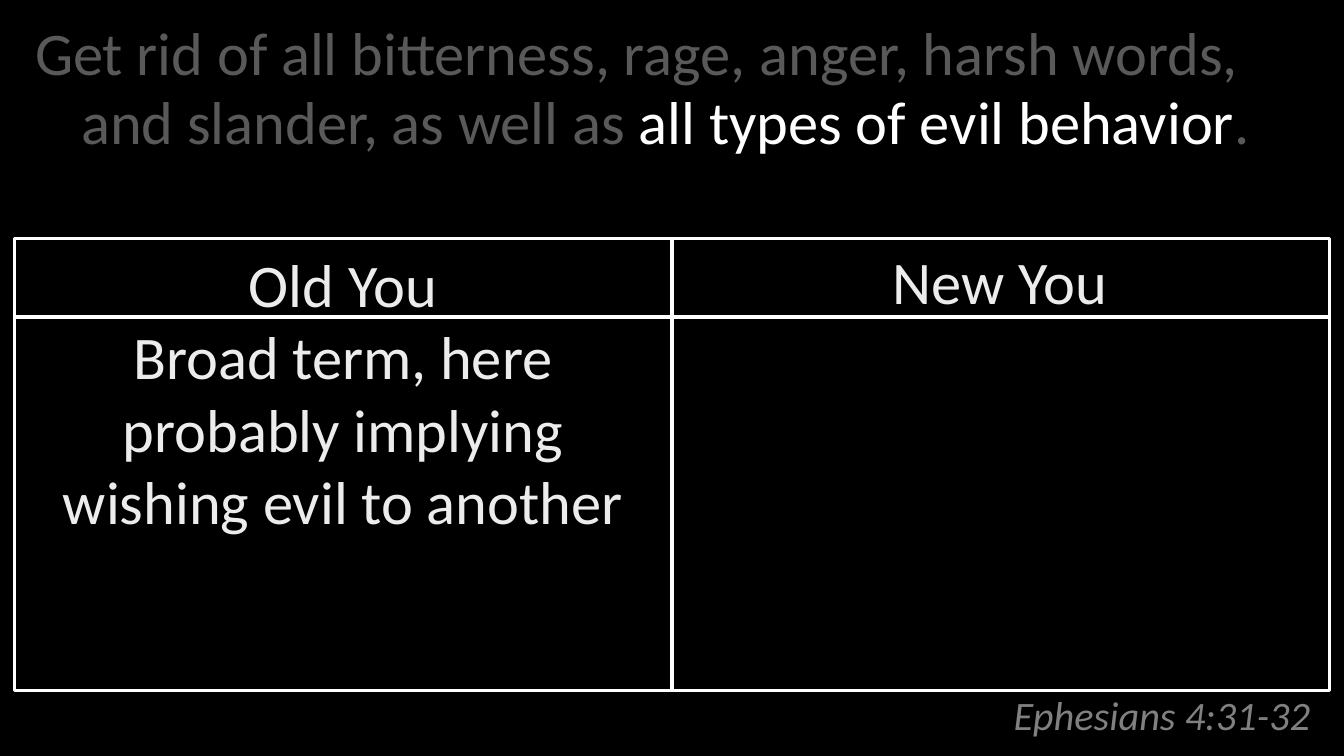
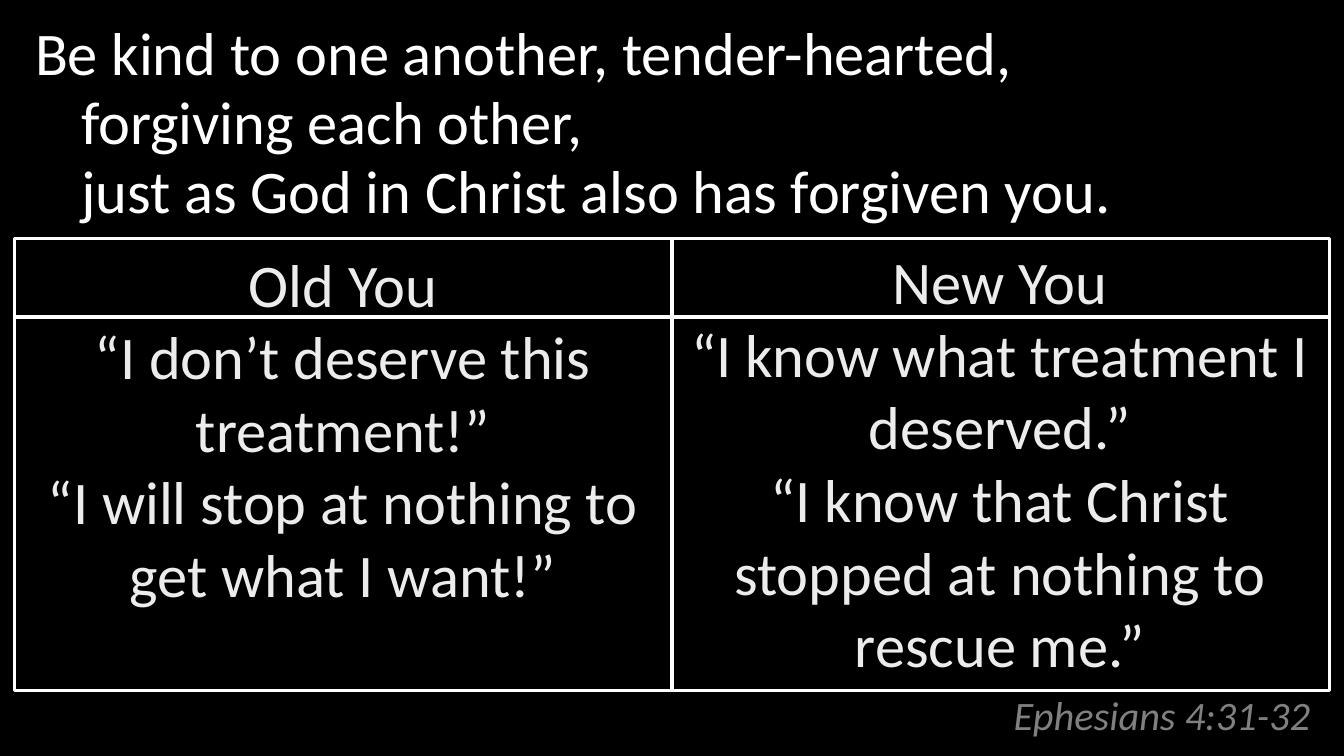
from lxml import etree
from pptx import Presentation
from pptx.dml.color import RGBColor
from pptx.enum import shapes, text
from pptx.oxml import ns
from pptx.util import Inches, Pt

WHITE, PALE, GRAY, DIM = "FFFFFF", "ECECEC", "808080", "595959"
LEFT, TOP, WIDTH, HEIGHT = 0.12, 1.97, 10.87, 3.74
RULE = 2.62

SLIDES = [
    {
        "verse": [
            ("Get rid of all bitterness, rage, anger, harsh words, and slander, as well as ", DIM),
            ("all types of evil behavior", WHITE),
            (".", DIM),
        ],
        "old": ["Broad term, here probably implying wishing evil to another"],
        "new": [],
    },
    {
        "verse": [
            ("Be kind to one another, tender-hearted, \nforgiving each other, \n"
             "just as God in Christ also has forgiven you.", WHITE),
        ],
        "old": ["“I don’t deserve this treatment!”",
                "“I will stop at nothing to get what I want!”"],
        "new": ["“I know what treatment I deserved.”",
                "“I know that Christ stopped at nothing to rescue me.”"],
    },
]


def color(value):
    return RGBColor.from_string(value)


def write(para, words, size=36, ink=PALE, italic=None):
    for index, line in enumerate(words.split("\n")):
        if index:
            para.add_line_break()
        span = para.add_run()
        span.text = line
        span.font.name = "Calibri"
        span.font.size = Pt(size)
        span.font.italic = italic
        span.font.color.rgb = color(ink)


deck = Presentation()
deck.slide_width, deck.slide_height = Inches(11.11), Inches(6.25)
backdrop = deck.slide_master.background.fill
backdrop.solid()
backdrop.fore_color.rgb = color("000000")

for content in SLIDES:
    page = deck.slides.add_slide(deck.slide_layouts[1])

    title, body = page.shapes.title, page.placeholders[1]
    title.left, title.top, title.width, title.height = map(Inches, (7.06, 5.56, 3.87, 0.59))
    body.left, body.top, body.width, body.height = map(Inches, (0.19, 0.12, 10.74, 5.29))
    for holder in (title, body):
        holder.text_frame.auto_size = text.MSO_AUTO_SIZE.NONE

    title.text_frame.vertical_anchor = text.MSO_ANCHOR.BOTTOM
    para = title.text_frame.paragraphs[0]
    para.alignment = text.PP_ALIGN.RIGHT
    para.line_spacing = 0.8
    write(para, "Ephesians 4:31-32", size=24, ink=GRAY, italic=True)

    para = body.text_frame.paragraphs[0]
    para.line_spacing = 0.95
    for words, ink in content["verse"]:
        write(para, words, ink=ink)
    properties = para._p.get_or_add_pPr()
    properties.set("marL", str(Inches(0.38)))
    properties.set("indent", str(Inches(-0.38)))
    etree.SubElement(properties, ns.qn("a:buNone"))

    frame = page.shapes.add_shape(
        shapes.MSO_SHAPE.RECTANGLE, *map(Inches, (LEFT, TOP, WIDTH, HEIGHT)))
    frame.shadow.inherit = False
    frame.fill.background()

    middle = LEFT + WIDTH / 2
    divider, rule = [
        page.shapes.add_connector(shapes.MSO_CONNECTOR.STRAIGHT, *map(Inches, ends))
        for ends in ((middle, TOP, middle, TOP + HEIGHT),
                     (LEFT, RULE, LEFT + WIDTH, RULE))
    ]
    divider.begin_connect(frame, 0)
    divider.end_connect(frame, 2)
    for connector in (divider, rule):
        etree.SubElement(connector._element.spPr, ns.qn("a:effectLst"))
    for outline in (frame, divider, rule):
        outline.line.color.rgb = color(WHITE)
        outline.line.width = Pt(2)

    for heading, lines, left, top in (("Old You", content["old"], 0.18, 1.99),
                                      ("New You", content["new"], 5.61, 1.97)):
        height = 0.71 if not lines else HEIGHT - 0.05
        box = page.shapes.add_textbox(*map(Inches, (left, top, 5.31, height)))
        box.text_frame.word_wrap = True
        box.text_frame.auto_size = text.MSO_AUTO_SIZE.SHAPE_TO_FIT_TEXT
        for index, words in enumerate([heading, *lines]):
            para = box.text_frame.add_paragraph() if index else box.text_frame.paragraphs[0]
            para.alignment = text.PP_ALIGN.CENTER
            write(para, words)

deck.save("out.pptx")
